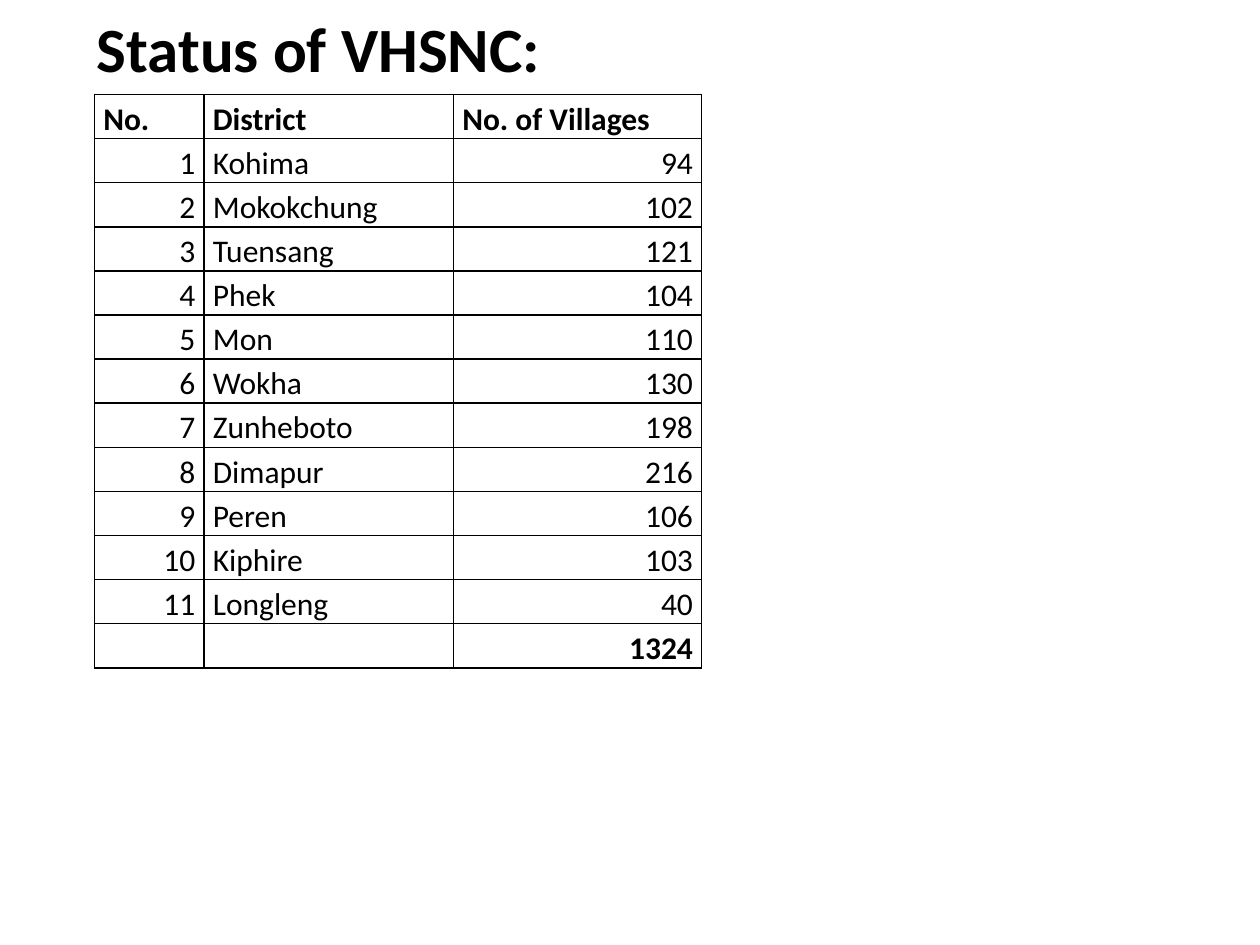
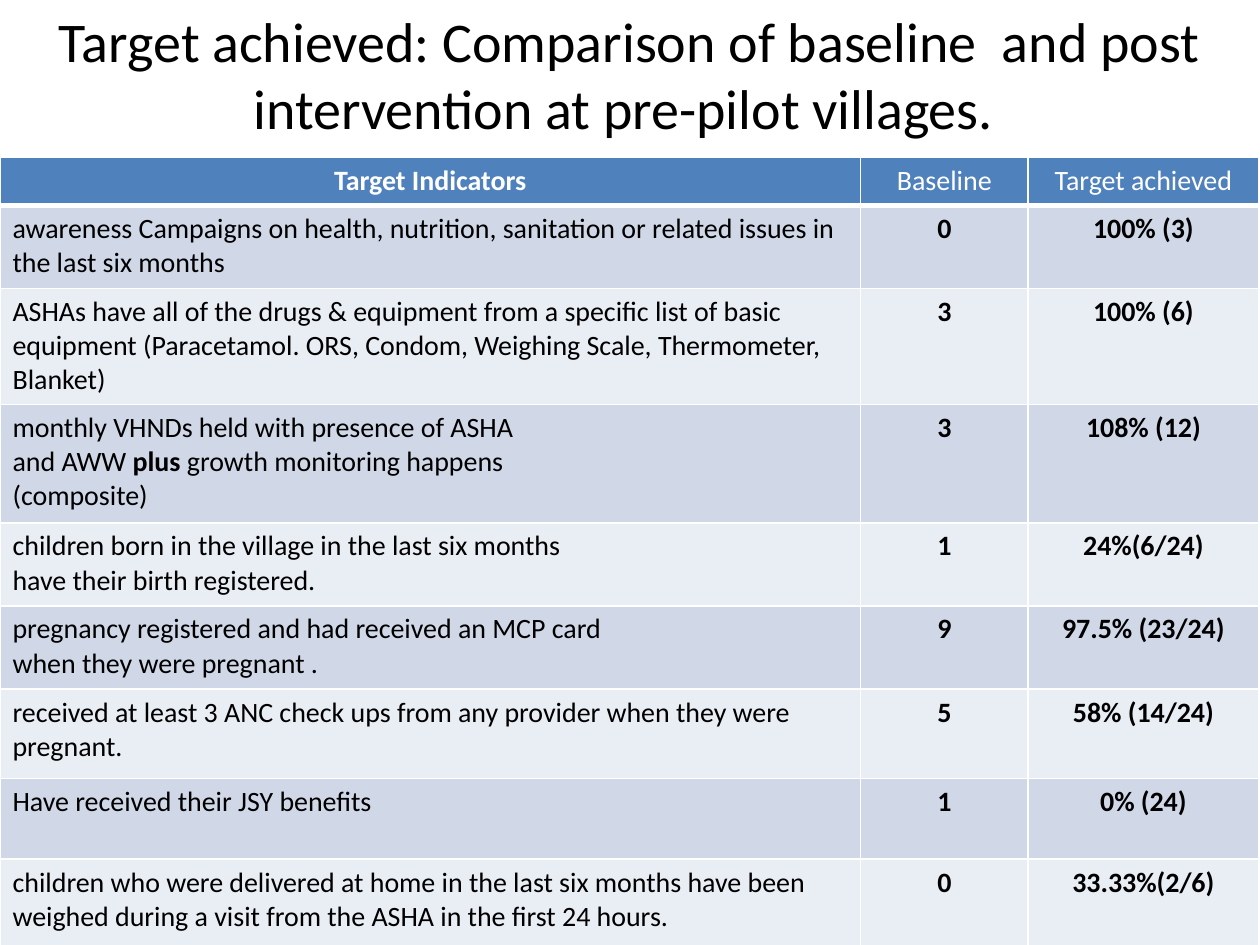
from dataclasses import dataclass
from lxml.etree import SubElement
from pptx import Presentation
from pptx.dml.color import RGBColor
from pptx.enum.text import MSO_ANCHOR, PP_ALIGN
from pptx.oxml.ns import qn
from pptx.util import Inches, Pt


@dataclass(frozen=True)
class Theme:
    font: str = "Calibri"
    black: str = "000000"
    white: str = "FFFFFF"
    header: str = "4F81BD"
    bands: tuple = ("D0D8E8", "E9EDF4")
    status_title: int = 36
    target_title: int = 32
    status_text: int = 18
    target_text: int = 16


theme = Theme()


def write(frame, text, size, color=theme.black, bold=False, **paragraph_format):
    for index, line in enumerate(text.split("\n")):
        paragraph = frame.paragraphs[0] if index == 0 else frame.add_paragraph()
        for name, value in paragraph_format.items():
            setattr(paragraph, name, value)
        for part, piece in enumerate(line.split("**")):
            run = paragraph.add_run()
            run.text = piece
            font_format = {"name": theme.font, "size": Pt(size), "bold": bold or part % 2 == 1}
            for name, value in font_format.items():
                setattr(run.font, name, value)
            run.font.color.rgb = RGBColor.from_string(color)


def style_cell(cell, border, bottom=1, fill=None):
    properties = cell._tc.get_or_add_tcPr()
    for side, points in {"lnL": 1, "lnR": 1, "lnT": 1, "lnB": bottom}.items():
        line = SubElement(properties, qn(f"a:{side}"), w=str(Pt(points)))
        SubElement(SubElement(line, qn("a:solidFill")), qn("a:srgbClr"), val=border)
    if fill:
        cell.fill.solid()
        cell.fill.fore_color.rgb = RGBColor.from_string(fill)
    else:
        cell.fill.background()


villages = {
    "Kohima": 94, "Mokokchung": 102, "Tuensang": 121, "Phek": 104,
    "Mon": 110, "Wokha": 130, "Zunheboto": 198, "Dimapur": 216,
    "Peren": 106, "Kiphire": 103, "Longleng": 40,
}
status_rows = [("No.", "District", "No. of Villages")]
status_rows += [(str(number), district, str(count))
                for number, (district, count) in enumerate(villages.items(), 1)]
status_rows.append(("", "", str(sum(villages.values()))))

target_rows = [
    (0.38, "Target Indicators", "Baseline", "Target achieved"),
    (0.66, "awareness Campaigns on health, nutrition, sanitation or related issues in "
     "the last six months", "0", "100% (3)"),
    (0.92, "ASHAs have all of the drugs & equipment from a specific list of basic equipment "
     "(Paracetamol. ORS, Condom, Weighing Scale, Thermometer, Blanket)", "3", "100% (6)"),
    (0.94, "monthly VHNDs held with presence of ASHA\n"
     "and AWW **plus** growth monitoring happens\n(composite)", "3", "108% (12)"),
    (0.66, "children born in the village in the last six months\n"
     "have their birth registered.", "1", "24%(6/24)"),
    (0.66, "pregnancy registered and had received an MCP card\n"
     "when they were pregnant .", "9", "97.5% (23/24)"),
    (0.71, "received at least 3 ANC check ups from any provider when they were pregnant.",
     "5", "58% (14/24)"),
    (0.64, "Have received their JSY benefits", "1", "0% (24)"),
    (0.9, "children who were delivered at home in the last six months have been weighed "
     "during a visit from the ASHA in the first 24 hours.", "0", "33.33%(2/6)"),
]

pages = [
    {
        "title": "Status of VHSNC:",
        "title_box": (0.67, 0, 5.25, 0.75),
        "title_format": {"size": theme.status_title, "bold": True, "alignment": PP_ALIGN.LEFT},
        "corner": (0.75, 0.75),
        "columns": (0.87, 1.98, 1.97),
        "heights": [0.35] * len(status_rows),
        "rows": status_rows,
    },
    {
        "title": "Target achieved: Comparison of baseline  and post intervention "
                 "at pre-pilot villages. ",
        "title_box": (0, 0.17, 10, 0.83),
        "title_format": {"size": theme.target_title, "alignment": PP_ALIGN.CENTER},
        "corner": (0, 1.25),
        "columns": (6.83, 1.33, 1.83),
        "heights": [row[0] for row in target_rows],
        "rows": [row[1:] for row in target_rows],
    },
]

deck = Presentation()
deck.slide_width, deck.slide_height = Inches(10), Inches(7.5)
tables = []

for page in pages:
    slide = deck.slides.add_slide(deck.slide_layouts[6])
    title = slide.shapes.add_textbox(*map(Inches, page["title_box"])).text_frame
    title.word_wrap = True
    title.vertical_anchor = MSO_ANCHOR.MIDDLE
    write(title, page["title"], **page["title_format"])
    table = slide.shapes.add_table(
        len(page["rows"]), len(page["columns"]), *map(Inches, page["corner"]),
        Inches(sum(page["columns"])), Inches(sum(page["heights"]))).table
    table.first_row = table.horz_banding = False
    for column, width in zip(table.columns, page["columns"]):
        column.width = Inches(width)
    for row, height in zip(table.rows, page["heights"]):
        row.height = Inches(height)
    tables.append(table)

status_table, target_table = tables
status_cell_format = {
    "margin_left": Inches(0.07), "margin_right": Inches(0.07),
    "margin_top": 0, "margin_bottom": 0, "vertical_anchor": MSO_ANCHOR.BOTTOM,
}

for row, values in enumerate(status_rows):
    for column, value in enumerate(values):
        cell = status_table.cell(row, column)
        for name, setting in status_cell_format.items():
            setattr(cell, name, setting)
        style_cell(cell, theme.black)
        write(cell.text_frame, value, theme.status_text,
              bold=row in (0, len(status_rows) - 1), line_spacing=1.15,
              alignment=PP_ALIGN.LEFT if row == 0 or column == 1 else PP_ALIGN.RIGHT)

for row, (height, *values) in enumerate(target_rows):
    heading = row == 0
    for column, value in enumerate(values):
        cell = target_table.cell(row, column)
        style_cell(cell, theme.white, bottom=3 if heading else 1,
                   fill=theme.header if heading else theme.bands[(row - 1) % 2])
        write(cell.text_frame, value, theme.target_text,
              color=theme.white if heading else theme.black,
              bold=heading == (column == 0),
              alignment=PP_ALIGN.CENTER if heading or column else PP_ALIGN.LEFT)

deck.save("out.pptx")
